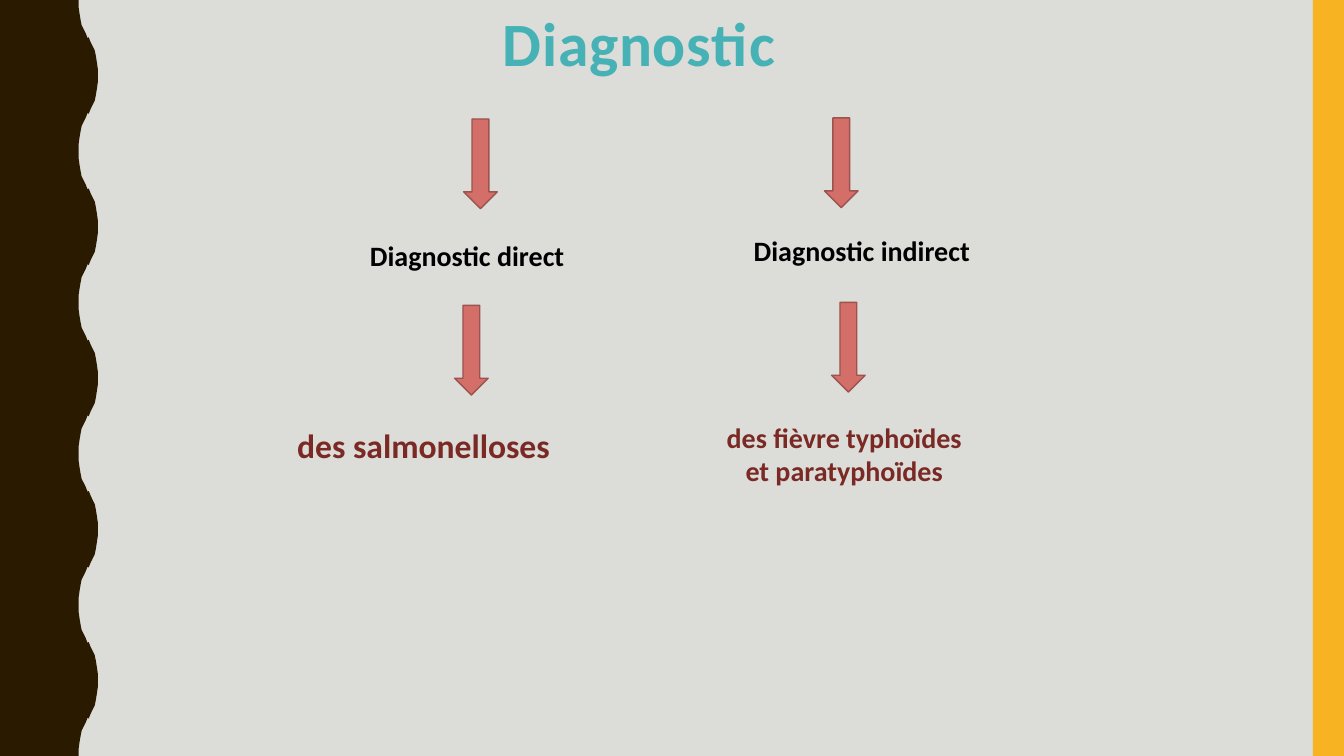
from dataclasses import dataclass

from lxml import etree
from pptx import Presentation
from pptx.dml.color import RGBColor
from pptx.enum.shapes import MSO_SHAPE
from pptx.enum.text import MSO_ANCHOR, MSO_AUTO_SIZE, PP_ALIGN
from pptx.oxml.ns import nsdecls
from pptx.util import Inches, Pt

RECT, DOWN_ARROW = MSO_SHAPE.RECTANGLE, MSO_SHAPE.DOWN_ARROW
LEFT, CENTER = PP_ALIGN.LEFT, PP_ALIGN.CENTER
TOP = MSO_ANCHOR.TOP
NO_FIT = MSO_AUTO_SIZE.NONE

WIDTH, HEIGHT = Inches(13.33), Inches(7.5)
COL, ROW = WIDTH / 40, HEIGHT / 50
TITLE_ONLY, BLANK_UNIT = 5, Inches(0.01)

# First quarter of one wave of the left edge, in hundredths of an inch
QUARTER = [(78, 0), (78, 7), (79, 14), (80, 20), (81, 25), (83, 29), (85, 33), (87, 38)]
WAVE_SUM, HALF_WAVE, WAVE_COUNT = 175, 75, 5


@dataclass(frozen=True)
class Theme:
    font: str = "Calibri"
    background: str = "DCDCD9"
    wave: str = "2A1A00"
    strip: str = "F8B323"
    title: str = "46B2B5"
    title_edge: str = "79566C"
    label: str = "000000"
    disease: str = "7A2924"
    arrow: str = "D36F68"
    arrow_line: str = "9C524D"
    title_size: int = 44
    large_size: int = 24
    text_size: int = 20


THEME = Theme()


def rgb(value):
    return RGBColor.from_string(value)


def grid(left, top, width, height):
    """Turn columns and rows into lengths."""
    return [int(n) for n in (left * COL, top * ROW, width * COL, height * ROW)]


def paint(sp, fill, line=None):
    sp.shadow.inherit = False
    sp.fill.solid()
    sp.fill.fore_color.rgb = rgb(fill)
    if line:
        sp.line.color.rgb = rgb(line)
        sp.line.width = Pt(1)
    else:
        sp.line.fill.background()


def write(tf, lines, size, color, align):
    tf.auto_size = NO_FIT
    tf.vertical_anchor = TOP
    tf.text = "\n".join(lines)
    for p in tf.paragraphs:
        p.alignment = align
        for r in p.runs:
            r.font.size = Pt(size)
            r.font.bold = True
            r.font.color.rgb = rgb(color)
            r.font.name = THEME.font


def add_wave(slide):
    """Draw the dark band whose right edge repeats one wave."""
    rise = QUARTER + [(WAVE_SUM - x, HALF_WAVE - y) for x, y in QUARTER[::-1]]
    wave = rise + [(x, 2 * HALF_WAVE - y) for x, y in rise[::-1]]
    edge = [(x, y + 2 * HALF_WAVE * i) for i in range(WAVE_COUNT) for x, y in wave]
    builder = slide.shapes.build_freeform(0, 0, scale=float(BLANK_UNIT))
    builder.add_line_segments(edge + [(0, edge[-1][1])], close=True)
    paint(builder.convert_to_shape(), THEME.wave)


def add_title(slide, text, place):
    sp = slide.shapes.title
    sp.left, sp.top, sp.width, sp.height = grid(*place)
    tf = sp.text_frame
    write(tf, [text], THEME.title_size, THEME.title, LEFT)
    tf.word_wrap = False
    rpr = tf.paragraphs[0].runs[0].font._element
    rpr.set("spc", "50")
    edge = f'<a:srgbClr val="{THEME.title_edge}"/>'
    line = f'<a:ln {nsdecls("a")} w="12700"><a:solidFill>{edge}</a:solidFill></a:ln>'
    shadow = (f'<a:effectLst {nsdecls("a")}><a:outerShdw blurRad="38100" dist="38100" '
              f'dir="2700000">{edge}</a:outerShdw></a:effectLst>')
    rpr.insert(0, etree.fromstring(line))
    rpr.insert(2, etree.fromstring(shadow))


def add_label(slide, lines, place, size, color, align=CENTER):
    tf = slide.shapes.add_textbox(*grid(*place)).text_frame
    tf.word_wrap = True
    write(tf, lines, size, color, align)


def add_arrow(slide, left, top):
    sp = slide.shapes.add_shape(DOWN_ARROW, *grid(left, top, 1, 5.93))
    paint(sp, THEME.arrow, THEME.arrow_line)


def main():
    prs = Presentation()
    prs.slide_width, prs.slide_height = WIDTH, HEIGHT
    slide = prs.slides.add_slide(prs.slide_layouts[TITLE_ONLY])
    slide.background.fill.solid()
    slide.background.fill.fore_color.rgb = rgb(THEME.background)

    add_wave(slide)
    strip = slide.shapes.add_shape(RECT, *grid(39.07, 0, 0.93, 50))
    paint(strip, THEME.strip)
    add_title(slide, "Diagnostic", (14.67, 0, 9.9, 5.6))

    for left, top in ((13.8, 7.87), (24.54, 7.8), (13.53, 20.2), (24.75, 20)):
        add_arrow(slide, left, top)

    small, large = THEME.text_size, THEME.large_size
    add_label(slide, ["Diagnostic direct"], (9.84, 15.47, 8.13, 2.93), small, THEME.label)
    add_label(slide, ["Diagnostic indirect"], (20.58, 15.13, 10.14, 2.93), small, THEME.label)
    add_label(slide, ["des salmonelloses"], (8.55, 27.8, 9.42, 3.33), large, THEME.disease, LEFT)
    add_label(slide, ["des fièvre typhoïdes", "et paratyphoïdes"],
              (17.67, 27.47, 14.91, 5.13), small, THEME.disease)

    prs.save("out.pptx")


if __name__ == "__main__":
    main()
